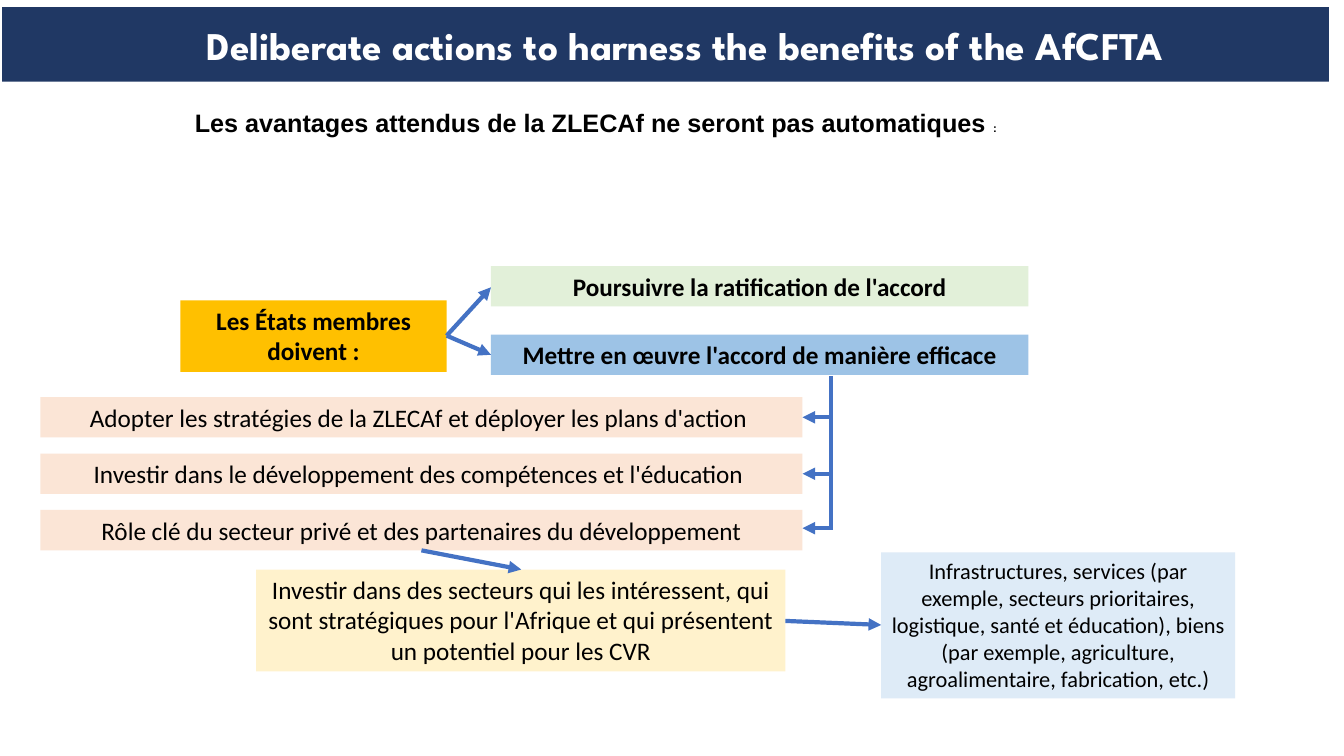
from dataclasses import dataclass
from itertools import pairwise
from lxml.etree import SubElement as Sub
from pptx import Presentation as Deck
from pptx.dml.color import RGBColor as Color
from pptx.enum.shapes import MSO_CONNECTOR as Link, MSO_SHAPE as Form
from pptx.enum.text import MSO_ANCHOR as Anchor, MSO_AUTO_SIZE as Fit, PP_ALIGN as Align
from pptx.oxml.ns import qn
from pptx.util import Inches, Pt


@dataclass(frozen=True)
class Theme:
    navy: str = "203864"
    gold: str = "FFC000"
    green: str = "E2F0D9"
    blue: str = "9DC3E6"
    peach: str = "FBE5D6"
    cream: str = "FFF2CC"
    pale: str = "DEEBF7"
    arrow: str = "4472C4"
    ink: str = "000000"
    white: str = "FFFFFF"
    head: str = "League Spartan"
    lead: str = "Arial"
    font: str = "Calibri"
    large: int = 28
    base: int = 18
    small: int = 16
    tiny: int = 8
    line: int = 3


def write(para, text, *, font, size, color, bold=False):
    run = para.add_run()
    run.text = text
    face = run.font
    face.name, face.size, face.bold = font, Pt(size), bold
    face.color.rgb = Color.from_string(color)


def place(shape, spot):
    shape.left, shape.top, shape.width, shape.height = map(Inches, spot)


def paint(shape, color):
    shape.fill.solid()
    shape.fill.fore_color.rgb = Color.from_string(color)


def center(shape, anchor):
    frame = shape.text_frame
    frame.word_wrap = True
    frame.auto_size = Fit.NONE
    frame.vertical_anchor = anchor
    para = frame.paragraphs[0]
    para.alignment = Align.CENTER
    return para


class Chart:
    def __init__(self, slide, theme):
        self.slide = slide
        self.theme = theme

    def title(self, text, spot):
        look, shape = self.theme, self.slide.shapes.title
        place(shape, spot)
        geom = Sub(shape.element.spPr, qn("a:prstGeom"), prst="roundRect")
        Sub(geom, qn("a:avLst"))
        paint(shape, look.navy)
        para = center(shape, Anchor.MIDDLE)
        para._p.get_or_add_pPr().set("marL", str(Inches(0.39)))
        write(para, text, font=look.head, size=look.large, color=look.white, bold=True)

    def intro(self, text, mark, spot):
        look, shape = self.theme, self.slide.placeholders[1]
        place(shape, spot)
        para = center(shape, Anchor.TOP)
        props = para._p.get_or_add_pPr()
        props.set("marL", "0")
        props.set("indent", "0")
        Sub(props, qn("a:buNone"))
        para.line_spacing = 0.9
        para.space_before = Pt(0)
        for part, size in ((text, look.base), (mark, look.tiny)):
            write(para, part, font=look.lead, size=size, color=look.ink, bold=True)

    def box(self, text, spot, fill, size=None, bold=False):
        look = self.theme
        shape = self.slide.shapes.add_shape(Form.RECTANGLE, *map(Inches, spot))
        shape.shadow.inherit = False
        paint(shape, fill)
        shape.line.fill.background()
        para = center(shape, Anchor.TOP)
        write(para, text, font=look.font, size=size or look.base, color=look.ink, bold=bold)

    def line(self, start, end, arrow=True):
        look = self.theme
        link = self.slide.shapes.add_connector(Link.STRAIGHT, *map(Inches, (*start, *end)))
        link.line.color.rgb = Color.from_string(look.arrow)
        link.line.width = Pt(look.line)
        if arrow:
            Sub(link.line._get_or_add_ln(), qn("a:tailEnd"), type="triangle")
        Sub(link._element.spPr, qn("a:effectLst"))


def main():
    deck = Deck()
    deck.slide_width, deck.slide_height = Inches(13.33), Inches(7.5)
    look = Theme()
    chart = Chart(deck.slides.add_slide(deck.slide_layouts[1]), look)

    chart.title("Deliberate actions to harness the benefits of the AfCFTA", (0.02, 0.07, 13.16, 0.74))
    chart.intro("Les avantages attendus de la ZLECAf ne seront pas automatiques ", ":", (0.4, 1.05, 11.02, 0.75))

    chart.box("Les États membres doivent :", (1.79, 2.98, 2.64, 0.71), look.gold, bold=True)
    goals = (
        ("Poursuivre la ratification de l'accord", 2.64, look.green, 2.85),
        ("Mettre en œuvre l'accord de manière efficace", 3.32, look.blue, 3.52),
    )
    for text, top, fill, tip in goals:
        chart.box(text, (4.87, top, 5.33, 0.4), fill, bold=True)
        chart.line((4.43, 3.33), (4.87, tip))

    steps = (
        "Adopter les stratégies de la ZLECAf et déployer les plans d'action ",
        "Investir dans le développement des compétences et l'éducation ",
        "Rôle clé du secteur privé et des partenaires du développement",
    )
    for row, text in enumerate(steps):
        chart.box(text, (0.4, 3.94 + 0.56 * row, 7.56, 0.4), look.peach)

    trunk = 8.24
    for y in (4.14, 4.7, 5.24):
        chart.line((trunk, y), (7.96, y))
    for top, low in pairwise((3.73, 4.14, 4.7, 5.26)):
        chart.line((trunk, top), (trunk, low), arrow=False)

    chart.box(
        "Investir dans des secteurs qui les intéressent, qui sont stratégiques pour l'Afrique "
        "et qui présentent un potentiel pour les CVR",
        (2.54, 5.65, 5.25, 1.01), look.cream,
    )
    chart.box(
        "Infrastructures, services (par exemple, secteurs prioritaires, logistique, santé et éducation), "
        "biens (par exemple, agriculture, agroalimentaire, fabrication, etc.)",
        (8.74, 5.48, 3.51, 1.45), look.pale, size=look.small,
    )
    chart.line((4.18, 5.46), (5.17, 5.65))
    chart.line((7.79, 6.16), (8.74, 6.2))
    deck.save("out.pptx")


if __name__ == "__main__":
    main()
